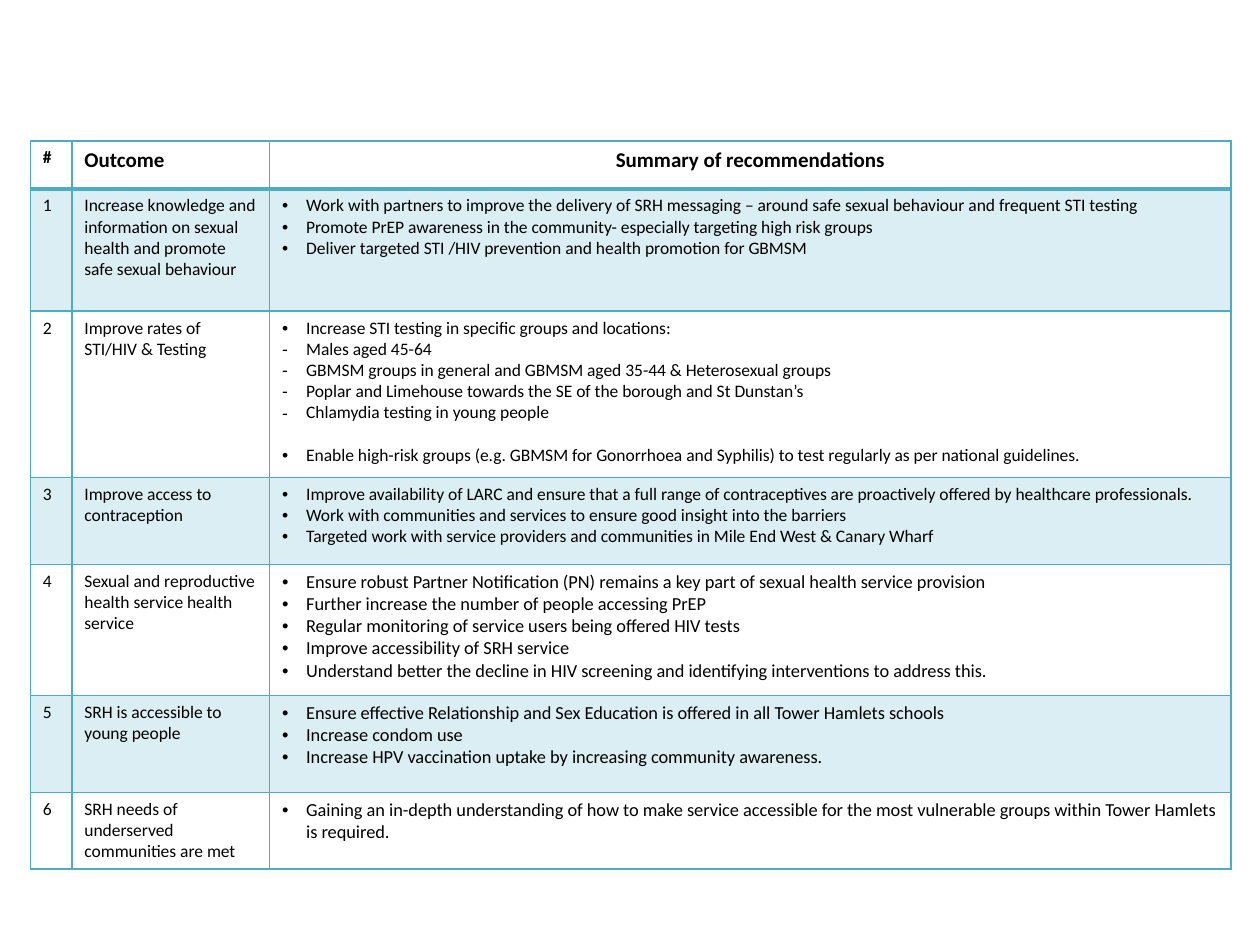
from lxml.etree import SubElement
from pptx import Presentation
from pptx.dml.color import RGBColor
from pptx.enum.text import PP_ALIGN as Align
from pptx.oxml.ns import qn
from pptx.util import Inches, Pt

BLACK = RGBColor(0x00, 0x00, 0x00)
TEAL = RGBColor(0x4B, 0xAC, 0xC6)
FONT = "Calibri"
BAND_OPACITY = 20  # percent
INDENT = 0.19
GAP_BEFORE = 12.2  # one line, in points

# Content: outcome, text size of recommendations, (bullet, text, space before)
HEADINGS = [("#", 10, Align.LEFT), ("Outcome", 12, Align.LEFT),
            ("Summary of recommendations", 12, Align.CENTER)]
OUTCOMES = [
    ("Increase knowledge and information on sexual health and promote safe sexual behaviour", 10, [
        ("•", "Work with partners to improve the delivery of SRH messaging – around safe sexual "
              "behaviour and frequent STI testing", 0),
        ("•", "Promote PrEP awareness in the community- especially targeting high risk groups", 0),
        ("•", "Deliver targeted STI /HIV prevention and health promotion for GBMSM", 0),
    ]),
    ("Improve rates of STI/HIV & Testing", 10, [
        ("•", "Increase STI testing in specific groups and locations:", 0),
        ("-", "Males aged 45-64", 0),
        ("-", "GBMSM groups in general and GBMSM aged 35-44 & Heterosexual groups", 0),
        ("-", "Poplar and Limehouse towards the SE of the borough and St Dunstan’s", 0),
        ("-", "Chlamydia testing in young people", 0),
        ("•", "Enable high-risk groups (e.g. GBMSM for Gonorrhoea and Syphilis) to test regularly "
              "as per national guidelines.", GAP_BEFORE),
    ]),
    ("Improve access to contraception", 10, [
        ("•", "Improve availability of LARC and ensure that a full range of contraceptives are "
              "proactively offered by healthcare professionals.", 0),
        ("•", "Work with communities and services to ensure good insight into the barriers", 0),
        ("•", "Targeted work with service providers and communities in Mile End West & Canary Wharf", 0),
    ]),
    ("Sexual and reproductive health service health service", 10.5, [
        ("•", "Ensure robust Partner Notification (PN) remains a key part of sexual health "
              "service provision", 0),
        ("•", "Further increase the number of people accessing PrEP", 0),
        ("•", "Regular monitoring of service users being offered HIV tests", 0),
        ("•", "Improve accessibility of SRH service", 0),
        ("•", "Understand better the decline in HIV screening and identifying interventions to "
              "address this.", 0),
    ]),
    ("SRH is accessible to young people", 10.5, [
        ("•", "Ensure effective Relationship and Sex Education is offered in all Tower Hamlets schools", 0),
        ("•", "Increase condom use", 0),
        ("•", "Increase HPV vaccination uptake by increasing community awareness.", 0),
    ]),
    ("SRH needs of underserved communities are met", 10.5, [
        ("•", "Gaining an in-depth understanding of how to make service accessible for the most "
              "vulnerable groups within Tower Hamlets is required.", 0),
    ]),
]
COLUMN_WIDTHS = [0.33, 1.57, 7.63]
ROW_HEIGHTS = [0.38, 0.97, 1.32, 0.69, 1.04, 0.77, 0.61]
TABLE_LEFT, TABLE_TOP = 0.24, 1.12


def write(paragraph, text, size=10, bold=False, align=Align.LEFT, bullet=None, before=0):
    """Fill one paragraph with formatted text."""
    paragraph.alignment = align
    if before:
        paragraph.space_before = Pt(before)
    if bullet:
        properties = paragraph._p.get_or_add_pPr()
        properties.set("marL", str(Inches(INDENT)))
        properties.set("indent", str(-Inches(INDENT)))
        SubElement(properties, qn("a:buFont"), typeface="Arial")
        SubElement(properties, qn("a:buChar"), char=bullet)
    run = paragraph.add_run()
    run.text = text
    run.font.name = FONT
    run.font.size = Pt(size)
    run.font.bold = bold
    run.font.color.rgb = BLACK


def style_cell(cell, banded, top, bottom):
    """Draw the cell borders, then its fill."""
    properties = cell._tc.get_or_add_tcPr()
    for side, width in (("L", 1), ("R", 1), ("T", top), ("B", bottom)):
        line = SubElement(properties, qn(f"a:ln{side}"), w=str(Pt(width)))
        solid = SubElement(line, qn("a:solidFill"))
        SubElement(solid, qn("a:srgbClr"), val=str(TEAL))
    if banded:
        cell.fill.solid()
        cell.fill.fore_color.rgb = TEAL
        color = properties.find(qn("a:solidFill")).find(qn("a:srgbClr"))
        SubElement(color, qn("a:alpha"), val=str(BAND_OPACITY * 1000))
    else:
        cell.fill.background()


def main():
    presentation = Presentation()
    presentation.slide_width, presentation.slide_height = Inches(10), Inches(7.5)
    slide = presentation.slides.add_slide(presentation.slide_layouts[6])

    # Table grid
    table = slide.shapes.add_table(
        len(ROW_HEIGHTS), len(COLUMN_WIDTHS), Inches(TABLE_LEFT), Inches(TABLE_TOP),
        Inches(sum(COLUMN_WIDTHS)), Inches(sum(ROW_HEIGHTS))).table
    table.first_row = table.horz_banding = False
    for column, width in zip(table.columns, COLUMN_WIDTHS):
        column.width = Inches(width)
    for index, (row, height) in enumerate(zip(table.rows, ROW_HEIGHTS)):
        row.height = Inches(height)
        for cell in row.cells:
            style_cell(cell, banded=index in (1, 3, 5),
                       top=2 if index == 1 else 1, bottom=2 if index == 0 else 1)

    # Header row
    for cell, (text, size, align) in zip(table.rows[0].cells, HEADINGS):
        write(cell.text_frame.paragraphs[0], text, size=size, bold=True, align=align)

    # Outcome rows
    for number, (outcome, size, recommendations) in enumerate(OUTCOMES, start=1):
        write(table.cell(number, 0).text_frame.paragraphs[0], str(number))
        write(table.cell(number, 1).text_frame.paragraphs[0], outcome)
        frame = table.cell(number, 2).text_frame
        for position, (bullet, text, before) in enumerate(recommendations):
            paragraph = frame.add_paragraph() if position else frame.paragraphs[0]
            write(paragraph, text, size=size, bullet=bullet, before=before)

    presentation.save("out.pptx")


if __name__ == "__main__":
    main()
